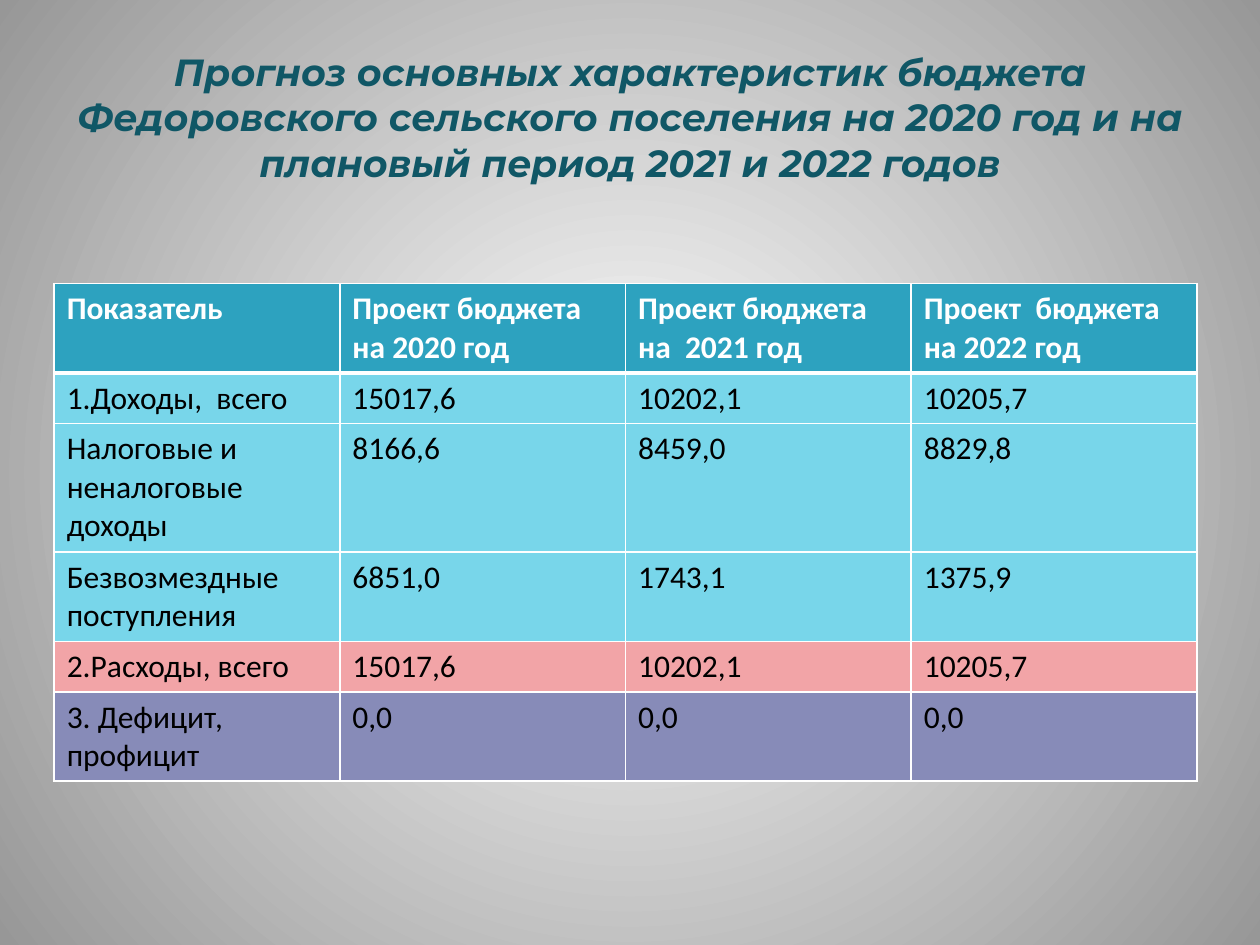
from lxml.etree import SubElement
from pptx import Presentation
from pptx.dml.color import RGBColor
from pptx.enum.text import MSO_ANCHOR as Anchor, PP_ALIGN as Align
from pptx.oxml.ns import qn
from pptx.util import Inches, Pt

COLORS = {
    "center": "FFFFFF",
    "edge": "979797",
    "title": "105766",
    "border": "FFFFFF",
    "header_text": "FFFFFF",
    "body_text": "000000",
    "header": "2DA2BF",
    "income": "78D6EA",
    "expense": "F2A4A7",
    "balance": "878BB8",
}

TITLE = ("Прогноз основных характеристик бюджета Федоровского сельского "
         "поселения на 2020 год и на плановый период 2021 и 2022 годов")

# Each row: fill name, height in inches, cell texts
ROWS = [
    ("header", 0.71, ["Показатель", "Проект бюджета на 2020 год",
                      "Проект бюджета на  2021 год", "Проект  бюджета на 2022 год"]),
    ("income", 0.4, ["1.Доходы,  всего", "15017,6", "10202,1", "10205,7"]),
    ("income", 1.02, ["Налоговые и неналоговые доходы", "8166,6", "8459,0", "8829,8"]),
    ("income", 0.71, ["Безвозмездные поступления", "6851,0", "1743,1", "1375,9"]),
    ("expense", 0.4, ["2.Расходы, всего", "15017,6", "10202,1", "10205,7"]),
    ("balance", 0.71, ["3. Дефицит, профицит", "0,0", "0,0", "0,0"]),
]


def rgb(name):
    return RGBColor.from_string(COLORS[name])


def write_text(frame, text, *, size=18, font="Calibri", color="body_text",
               bold=False, italic=False, align=Align.LEFT):
    paragraph = frame.paragraphs[0]
    paragraph.alignment = align
    run = paragraph.add_run()
    run.text = text
    run.font.size = Pt(size)
    run.font.name = font
    run.font.bold = bold
    run.font.italic = italic
    run.font.color.rgb = rgb(color)


def set_background(slide):
    fill = slide.background.fill
    fill.gradient()
    for stop, name in zip(fill.gradient_stops, ("center", "edge")):
        stop.color.rgb = rgb(name)
    # Replace the linear direction with a circle around the middle
    gradient = slide.element.find(".//" + qn("a:gradFill"))
    linear = gradient.find(qn("a:lin"))
    if linear is not None:
        gradient.remove(linear)
    circle = SubElement(gradient, qn("a:path"), path="circle")
    SubElement(circle, qn("a:fillToRect"), l="50000", t="50000", r="50000", b="50000")


def add_title(slide):
    box = slide.shapes.add_textbox(Inches(0.5), Inches(0.3), Inches(9), Inches(1.25))
    box.text_frame.word_wrap = True
    box.text_frame.vertical_anchor = Anchor.MIDDLE
    write_text(box.text_frame, TITLE, size=21.6, font="Montserrat", color="title",
               bold=True, italic=True, align=Align.CENTER)


def set_borders(cell, **widths):
    properties = cell._tc.get_or_add_tcPr()
    for position, side in enumerate("LRTB"):
        line = properties.makeelement(qn(f"a:ln{side}"), {"w": str(Pt(widths.get(side, 1)))})
        solid = SubElement(line, qn("a:solidFill"))
        SubElement(solid, qn("a:srgbClr"), val=COLORS["border"])
        properties.insert(position, line)  # borders come before the fill


def add_budget_table(slide):
    column_count = len(ROWS[0][2])
    table = slide.shapes.add_table(
        len(ROWS), column_count, Inches(0.43), Inches(2.25), Inches(9.07),
        Inches(sum(height for _, height, _ in ROWS))).table
    for row_index, (fill, height, texts) in enumerate(ROWS):
        table.rows[row_index].height = Inches(height)
        is_header = fill == "header"
        for column_index, text in enumerate(texts):
            cell = table.cell(row_index, column_index)
            cell.fill.solid()
            cell.fill.fore_color.rgb = rgb(fill)
            # A thick rule parts the header from the body
            set_borders(cell, T=3 if row_index == 1 else 1, B=3 if is_header else 1)
            write_text(cell.text_frame, text, bold=is_header,
                       color="header_text" if is_header else "body_text")


def main():
    presentation = Presentation()
    presentation.slide_width = Inches(10)
    presentation.slide_height = Inches(7.5)
    slide = presentation.slides.add_slide(presentation.slide_layouts[6])
    set_background(slide)
    add_title(slide)
    add_budget_table(slide)
    presentation.save("out.pptx")


if __name__ == "__main__":
    main()
